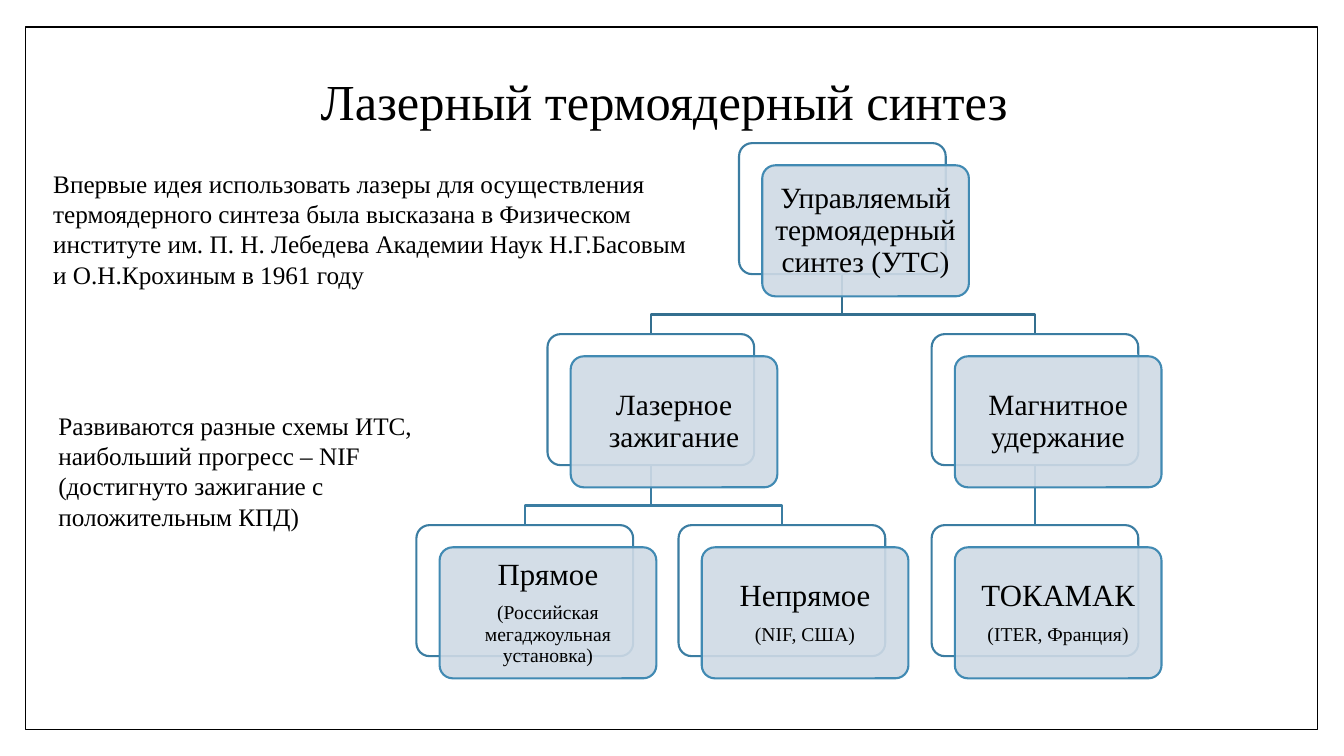
from lxml import etree
from pptx import Presentation
from pptx.dml.color import RGBColor
from pptx.enum import shapes, text
from pptx.oxml import ns
from pptx.util import Inches, Pt

FONT = "Times New Roman"
BLACK = RGBColor(0x00, 0x00, 0x00)
WHITE = RGBColor(0xFF, 0xFF, 0xFF)
CARD_FILL = RGBColor(0xCF, 0xDA, 0xE5)
CARD_LINE = RGBColor(0x41, 0x8A, 0xB3)
BACK_LINE = RGBColor(0x3B, 0x7D, 0xA2)
TOP_LINK = RGBColor(0x34, 0x6F, 0x8F)

# Content
TITLE = "Лазерный термоядерный синтез"
NOTES = [  # text, top, width, indent
    ("Впервые идея использовать лазеры для осуществления термоядерного синтеза "
     "была высказана в Физическом институте им. П. Н. Лебедева Академии Наук "
     "Н.Г.Басовым и О.Н.Крохиным в 1961 году", 1.62, 6.67, 0),
    ("Развиваются разные схемы ИТС, наибольший прогресс – NIF "
     "(достигнуто зажигание с положительным КПД)", 4.02, 3.82, 0.05),
]
NODES = {  # key: level, left, width, [(text, size)]
    "fusion": (0, 7.33, 2.05, [("Управляемый термоядерный синтез (УТС)", 21)]),
    "laser": (1, 5.43, 2.05, [("Лазерное зажигание", 21)]),
    "direct": (2, 4.13, 2.15, [("Прямое", 22),
                               ("(Российская мегаджоульная установка)", 14)]),
    "indirect": (2, 6.73, 2.05, [("Непрямое", 22), ("(NIF, США)", 14)]),
    "magnetic": (1, 9.24, 2.05, [("Магнитное удержание", 21)]),
    "tokamak": (2, 9.24, 2.05, [("ТОКАМАК", 22), ("(ITER, Франция)", 14)]),
}
LINKS = [("magnetic", "tokamak"), ("fusion", "magnetic"), ("laser", "indirect"),
         ("laser", "direct"), ("fusion", "laser")]

# Tree geometry
TREE_TOP, LEVEL_STEP, CARD_HEIGHT = 1.42, 1.895, 1.3
OFFSET_X, OFFSET_Y = 0.23, 0.22
BEND_DROP = 0.4

presentation = Presentation()
presentation.slide_width = Inches(13.33)
presentation.slide_height = Inches(7.5)
slide = presentation.slides.add_slide(presentation.slide_layouts[6])


def add_box(kind, left, top, width, height, fill, line, line_width):
    shape = slide.shapes.add_shape(
        kind, Inches(left), Inches(top), Inches(width), Inches(height))
    shape.shadow.inherit = False
    shape.fill.solid()
    shape.fill.fore_color.rgb = fill
    shape.line.color.rgb = line
    shape.line.width = Pt(line_width)
    return shape


def add_run(paragraph, words, size):
    run = paragraph.add_run()
    run.text = words
    run.font.name = FONT
    run.font.size = Pt(size)
    run.font.color.rgb = BLACK


def add_text_box(words, size, left, top, width, height):
    frame = slide.shapes.add_textbox(
        Inches(left), Inches(top), Inches(width), Inches(height)).text_frame
    frame.word_wrap = True
    add_run(frame.paragraphs[0], words, size)
    return frame


def level_top(level):
    return TREE_TOP + level * LEVEL_STEP


def add_link(parent, child):
    level, parent_left, parent_width, _ = NODES[parent]
    child_level, child_left, child_width, _ = NODES[child]
    start_x = parent_left + parent_width / 2
    end_x = child_left + child_width / 2
    start_y = level_top(level) + CARD_HEIGHT
    end_y = level_top(child_level)
    if start_x == end_x:
        link = slide.shapes.add_connector(
            shapes.MSO_CONNECTOR.STRAIGHT, Inches(start_x), Inches(start_y),
            Inches(end_x), Inches(end_y))
        etree.SubElement(link._element.spPr, ns.qn("a:effectLst"))
    else:
        bend_y = start_y + BEND_DROP
        builder = slide.shapes.build_freeform(
            Inches(start_x), Inches(start_y))
        builder.add_line_segments(
            [(Inches(x), Inches(y)) for x, y in
             [(start_x, bend_y), (end_x, bend_y), (end_x, end_y)]], close=False)
        link = builder.convert_to_shape()
        link.shadow.inherit = False
        link.fill.background()
    link.line.color.rgb = BACK_LINE if level else TOP_LINK
    link.line.width = Pt(1.5)


def add_node(level, left, width, lines):
    top = level_top(level)
    rounded = shapes.MSO_SHAPE.ROUNDED_RECTANGLE
    back = add_box(rounded, left, top, width, CARD_HEIGHT, WHITE, BACK_LINE, 1.5)
    card = add_box(rounded, left + OFFSET_X, top + OFFSET_Y, width, CARD_HEIGHT,
                   CARD_FILL, CARD_LINE, 1.5)
    back.adjustments[0] = card.adjustments[0] = 0.1
    color = card.fill._xPr.find(ns.qn("a:solidFill"))[0]
    etree.SubElement(color, ns.qn("a:alpha"), val="90000")

    frame = card.text_frame
    frame.word_wrap = True
    frame.vertical_anchor = text.MSO_ANCHOR.MIDDLE
    frame.margin_left = frame.margin_right = Inches(0.08)
    frame.margin_top = frame.margin_bottom = Inches(0.09)
    for index, (words, size) in enumerate(lines):
        paragraph = frame.add_paragraph() if index else frame.paragraphs[0]
        paragraph.alignment = text.PP_ALIGN.CENTER
        paragraph.line_spacing = 0.9
        paragraph.space_after = Pt(round(size * 0.35, 1))
        add_run(paragraph, words, size)


# Frame
add_box(shapes.MSO_SHAPE.RECTANGLE, 0.25, 0.27, 12.82, 6.97, WHITE, BLACK, 1)

# Tree: links lie behind the cards
for parent, child in LINKS:
    add_link(parent, child)
for node in NODES.values():
    add_node(*node)

# Title
title = add_text_box(TITLE, 36, 1.19, 0.29, 10.8, 1.48)
title.vertical_anchor = text.MSO_ANCHOR.MIDDLE
title.paragraphs[0].alignment = text.PP_ALIGN.CENTER
title.paragraphs[0].line_spacing = 0.9

# Notes on the left
for words, top, width, indent in NOTES:
    note = add_text_box(words, 18, 0.43, top, width, 1.31)
    if indent:
        properties = note.paragraphs[0]._p.get_or_add_pPr()
        properties.set("marL", str(Inches(indent)))
        properties.set("indent", "0")

presentation.save("out.pptx")
